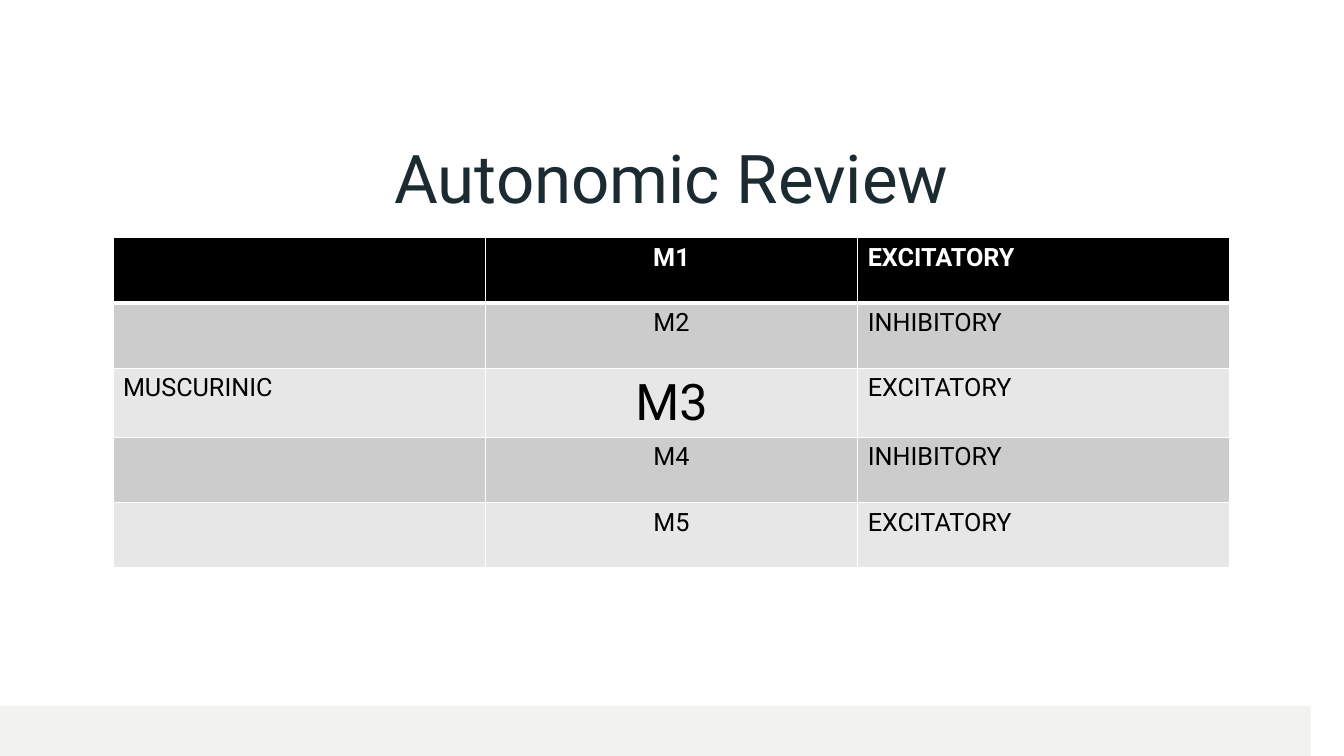
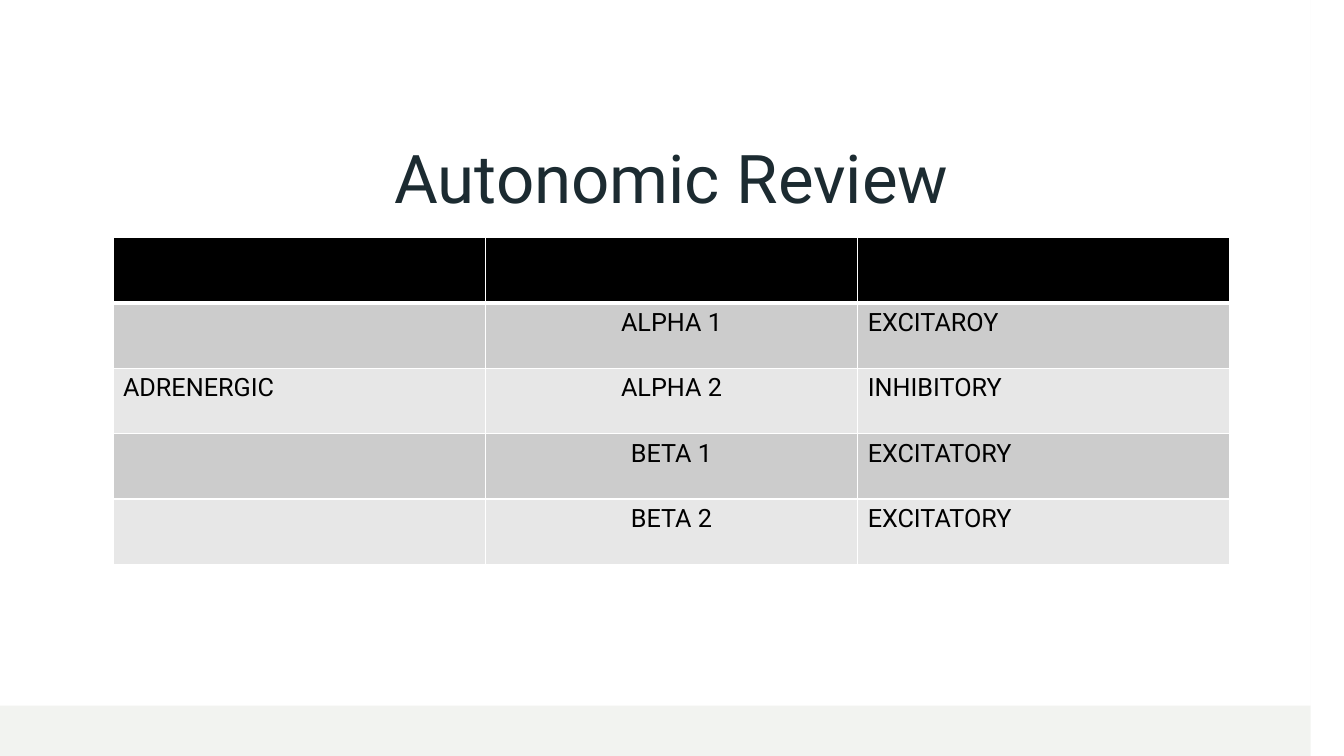
import lxml.etree
import pptx
import pptx.dml.color
import pptx.enum.text
import pptx.oxml.ns
import pptx.util

Inches = pptx.util.Inches
ALIGN = pptx.enum.text.PP_ALIGN

WIDTH, HEIGHT = 13.33, 7.5
MARGIN_X, MARGIN_Y = 0.18, 0.17
TITLE_BOX = (1.12, 0.79, 11.08, 1.41)
TABLE_BOX = (1.12, 2.36, 11.08, 3.24)
FONT = "Roboto"
FRAME, INK, WHITE, BLACK = "F2F3F0", "1C2B31", "FFFFFF", "000000"
BANDS = ("CCCCCC", "E7E7E7")
COLUMN_ALIGN = (ALIGN.LEFT, ALIGN.CENTER, ALIGN.LEFT)

TITLE = "Autonomic Review"
MUSCARINIC = [
    ("", "M1", "EXCITATORY"),
    ("", "M2", "INHIBITORY"),
    ("MUSCURINIC", "M3", "EXCITATORY"),
    ("", "M4", "INHIBITORY"),
    ("", "M5", "EXCITATORY"),
]
ADRENERGIC = [
    ("", "", ""),
    ("", "ALPHA 1", "EXCITAROY"),
    ("ADRENERGIC", "ALPHA 2", "INHIBITORY"),
    ("", "BETA 1", "EXCITATORY"),
    ("", "BETA 2", "EXCITATORY"),
]


def paint(fill, color):
    """Give a fill one solid colour from a hex string."""
    fill.solid()
    fill.fore_color.rgb = pptx.dml.color.RGBColor.from_string(color)


def write(frame, text, size=18, color=BLACK, bold=False, align=ALIGN.LEFT, spacing=1.0):
    """Write one formatted paragraph into a text frame."""
    paragraph = frame.paragraphs[0]
    paragraph.alignment = align
    paragraph.line_spacing = spacing
    paragraph.font.size = pptx.util.Pt(size)
    if text:
        run = paragraph.add_run()
        run.text = text
        run.font.name = FONT
        run.font.size = pptx.util.Pt(size)
        run.font.bold = bold
        paint(run.font.fill, color)


def set_borders(cell, color, **widths):
    """Draw the cell borders, with widths in points keyed by L, R, T and B."""
    properties = cell._tc.get_or_add_tcPr()
    for index, side in enumerate("LRTB"):
        line = lxml.etree.Element(pptx.oxml.ns.qn(f"a:ln{side}"))
        line.set("w", str(pptx.util.Pt(widths.get(side, 1))))
        solid = lxml.etree.SubElement(line, pptx.oxml.ns.qn("a:solidFill"))
        lxml.etree.SubElement(solid, pptx.oxml.ns.qn("a:srgbClr")).set("val", color)
        properties.insert(index, line)


def move_to_box(shape, box):
    """Place a shape on a box given in inches."""
    shape.left, shape.top, shape.width, shape.height = map(Inches, box)


def add_page_frame(slide, layout):
    """Outline the page with a band and hand it to the layout."""
    right, bottom = WIDTH - MARGIN_X, HEIGHT - MARGIN_Y
    builder = slide.shapes.build_freeform(0, 0, scale=Inches(1))
    builder.add_line_segments([(WIDTH, 0), (WIDTH, HEIGHT), (0, HEIGHT)])
    builder.move_to(MARGIN_X, MARGIN_Y)
    builder.add_line_segments([(MARGIN_X, bottom), (right, bottom), (right, MARGIN_Y)])
    band = builder.convert_to_shape()
    band.shadow.inherit = False
    paint(band.fill, FRAME)
    band.line.fill.background()
    band.element.nvSpPr.cNvPr.set("id", "20")
    layout.shapes.element.insert(2, band.element)


def add_title(slide, text):
    """Fill the title placeholder."""
    frame = slide.shapes.title.text_frame
    frame.auto_size = pptx.enum.text.MSO_AUTO_SIZE.NONE
    frame.vertical_anchor = pptx.enum.text.MSO_ANCHOR.BOTTOM
    write(frame, text, size=48, color=INK, align=ALIGN.CENTER, spacing=1.1)


def add_receptor_table(slide, box, rows, large=()):
    """Add a banded receptor table, with some entries set large."""
    table = slide.shapes.add_table(len(rows), len(rows[0]), *map(Inches, box)).table
    for r, row in enumerate(rows):
        header = r == 0
        for c, text in enumerate(row):
            cell = table.cell(r, c)
            paint(cell.fill, BLACK if header else BANDS[(r - 1) % 2])
            set_borders(cell, WHITE, T=3 if r == 1 else 1, B=3 if header else 1)
            write(cell.text_frame, text, size=36 if text in large else 18,
                  color=WHITE if header else BLACK, bold=header, align=COLUMN_ALIGN[c])


def main():
    """Build the deck and save it."""
    deck = pptx.Presentation()
    deck.slide_width, deck.slide_height = Inches(WIDTH), Inches(HEIGHT)
    layout = deck.slide_layouts[5]
    paint(layout.background.fill, WHITE)
    move_to_box(layout.placeholders[0], TITLE_BOX)
    for rows, large in ((MUSCARINIC, ("M3",)), (ADRENERGIC, ())):
        slide = deck.slides.add_slide(layout)
        add_title(slide, TITLE)
        add_receptor_table(slide, TABLE_BOX, rows, large)
    add_page_frame(deck.slides[0], layout)
    deck.save("out.pptx")


if __name__ == "__main__":
    main()
